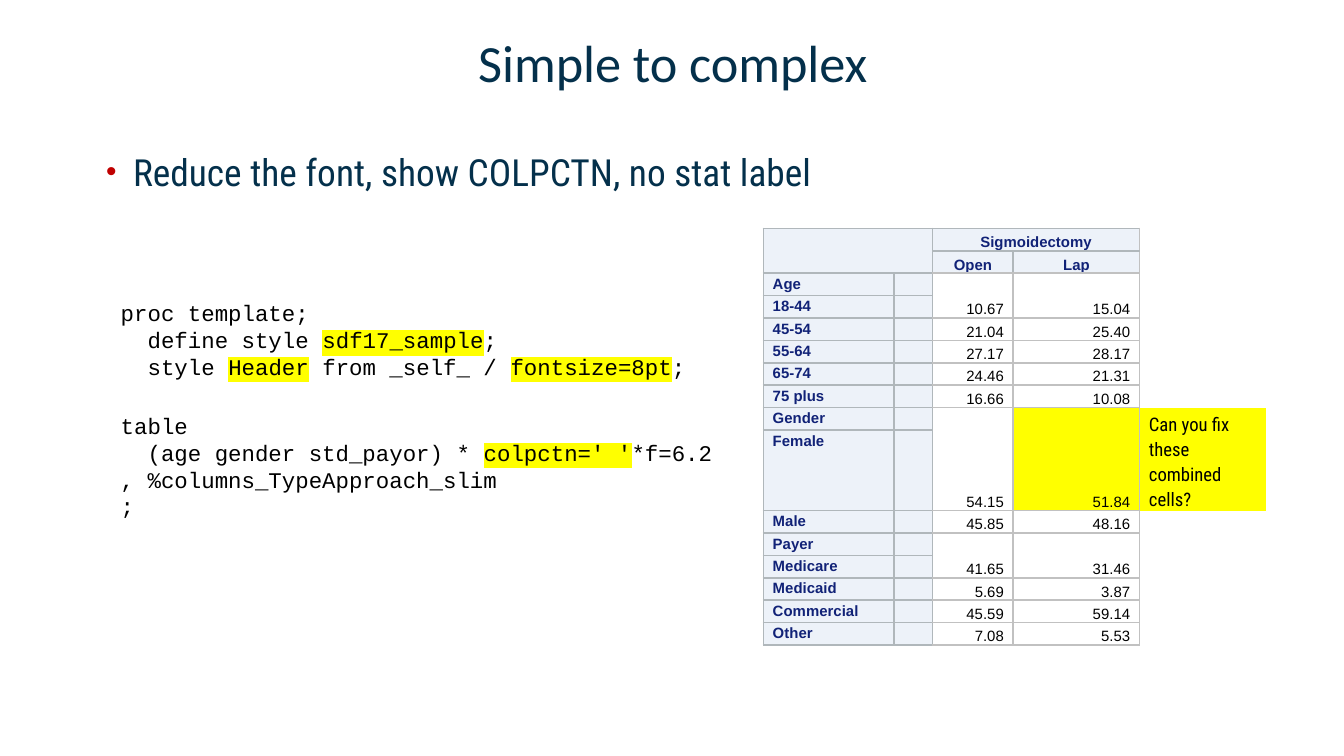
"""Builds the "Simple to complex" slide: a code listing beside its formatted table."""
from lxml import etree
from pptx import Presentation
from pptx import util as u
from pptx.dml.color import RGBColor
from pptx.enum import text
from pptx.oxml.ns import qn

NAVY, YELLOW, GRID, HEADER_GRID = "04304B", "FFFF00", "C1C1C1", "B0B7BB"


def color(hex_string):
    return RGBColor.from_string(hex_string)


def add_run(paragraph, words, face, size, ink, bold=False):
    run = paragraph.add_run()
    run.text = words
    for key, value in {"name": face, "size": u.Pt(size), "bold": bold}.items():
        setattr(run.font, key, value)
    run.font.color.rgb = color(ink)
    return run


prs = Presentation()
prs.slide_width, prs.slide_height = u.Inches(10), u.Inches(10 * 9 / 16)
slide = prs.slides.add_slide(prs.slide_layouts[1])

title, body = slide.placeholders
for part, top, height in ((title, 0.21, 0.5), (body, 1.11, 3.98)):
    box = {"left": 0.69, "top": top, "width": 8.63, "height": height}
    for key, value in box.items():
        setattr(part, key, u.Inches(value))
    part.text_frame.auto_size = text.MSO_AUTO_SIZE.NONE

title.text_frame.vertical_anchor = text.MSO_ANCHOR.MIDDLE
heading = title.text_frame.paragraphs[0]
heading.alignment = text.PP_ALIGN.CENTER
add_run(heading, "Simple to complex", "Calibri", 28, NAVY)

point = body.text_frame.paragraphs[0]
bullet = point._p.get_or_add_pPr()
bullet.set("marL", str(u.Inches(0.2)))
bullet.set("indent", str(-u.Inches(0.2)))
bullet_color = etree.SubElement(bullet, qn("a:buClr"))
etree.SubElement(bullet_color, qn("a:srgbClr"), val="C00000")
etree.SubElement(bullet, qn("a:buSzPct"), val="80000")
etree.SubElement(bullet, qn("a:buFont"), typeface="Arial")
etree.SubElement(bullet, qn("a:buChar"), char="•")
point.line_spacing, point.space_before = 0.85, u.Pt(0)
add_run(point, "Reduce the font, show COLPCTN, no stat label", "Roboto Condensed", 20, NAVY)

code_lines = [
    ["proc template;"],
    ["  define style ", "sdf17_sample", ";"],
    ["  style ", "Header", " from _self_ / ", "fontsize=8pt", ";"],
    ["table"],
    ["  (age gender std_payor) * ", "colpctn=' '", "*f=6.2"],
    [", %columns_TypeApproach_slim"],
    [";"],
]
code = slide.shapes.add_textbox(u.Inches(0.8), u.Inches(2.18), u.Inches(4.88), u.Inches(1.95)).text_frame
code.word_wrap = True
for number, pieces in enumerate(code_lines):
    line = code.add_paragraph() if number else code.paragraphs[0]
    if pieces == ["table"]:
        line.space_before = u.Pt(17)
    for position, piece in enumerate(pieces):
        run = add_run(line, piece, "Courier New", 12, "000000")
        if position % 2:
            highlight = etree.Element(qn("a:highlight"))
            etree.SubElement(highlight, qn("a:srgbClr"), val=YELLOW)
            run._r.rPr.find(qn("a:solidFill")).addnext(highlight)

rows = [
    ("", "", "Sigmoidectomy", "", ""),
    ("", "", "Open", "Lap", ""),
    ("Age", "", "10.67", "15.04", ""),
    ("18-44", "", "", "", ""),
    ("45-54", "", "21.04", "25.40", ""),
    ("55-64", "", "27.17", "28.17", ""),
    ("65-74", "", "24.46", "21.31", ""),
    ("75 plus", "", "16.66", "10.08", ""),
    ("Gender", "", "54.15", "51.84", "Can you fix these combined cells?"),
    ("Female", "", "", "", ""),
    ("Male", "", "45.85", "48.16", ""),
    ("Payer", "", "41.65", "31.46", ""),
    ("Medicare", "", "", "", ""),
    ("Medicaid", "", "5.69", "3.87", ""),
    ("Commercial", "", "45.59", "59.14", ""),
    ("Other", "", "7.08", "5.53", ""),
]
frame = slide.shapes.add_table(len(rows), 5, u.Inches(5.68), u.Inches(1.7), u.Inches(3.74), u.Inches(3.1))
results = frame.table
results.first_row = results.horz_banding = False
results._tbl.tblPr.find(qn("a:tableStyleId")).text = "{2D5ABB26-0587-4C30-8999-92F81FD0307C}"
for column, width in zip(results.columns, (0.97, 0.29, 0.6, 0.94, 0.94)):
    column.width = u.Inches(width)
for row, (label, *_) in zip(results.rows, rows):
    row.height = u.Inches(0.6) if label == "Female" else u.Pt(12)

merges = [(0, 0, 1, 1), (0, 2, 0, 3), (8, 4, 9, 4)]
merges += [(r, c, r + 1, c) for r in (2, 8, 11) for c in (2, 3)]
for top, left, bottom, right in merges:
    results.cell(top, left).merge(results.cell(bottom, right))

for r, values in enumerate(rows):
    for c, value in enumerate(values):
        cell = results.cell(r, c)
        is_side = c == 4
        is_header = not is_side and (r < 2 or c < 2)
        entry = cell.text_frame.paragraphs[0]
        entry.line_spacing = 1.15
        if r < 2:
            entry.alignment = text.PP_ALIGN.CENTER
        elif c in (2, 3):
            entry.alignment = text.PP_ALIGN.RIGHT
        if value:
            face, size = ("Roboto Condensed", 10) if is_side else ("Arial", 8)
            add_run(entry, value, face, size, "112277" if is_header else "000000", is_header)
        else:
            etree.SubElement(entry._p, qn("a:endParaRPr"), sz="800")
        margins = {"margin_left": 0.07, "margin_right": 0.07, "margin_top": 0, "margin_bottom": 0}
        for key, inset in margins.items():
            setattr(cell, key, u.Inches(inset))
        cell.vertical_anchor = text.MSO_ANCHOR.TOP if c < 2 else text.MSO_ANCHOR.BOTTOM
        if cell.is_spanned:
            continue
        for side in "LTB" if value == "Sigmoidectomy" else "LRTB":
            edge = etree.SubElement(cell._tc.get_or_add_tcPr(), qn("a:ln" + side), w=str(u.Pt(1)))
            if is_side and side != "L":
                etree.SubElement(edge, qn("a:noFill"))
                continue
            paint = etree.SubElement(edge, qn("a:solidFill"))
            dark = is_header or (c == 2 and side == "L")
            etree.SubElement(paint, qn("a:srgbClr"), val=HEADER_GRID if dark else GRID)
        cell.fill.solid()
        is_marked = r == 8 and c > 2
        cell.fill.fore_color.rgb = color(YELLOW if is_marked else "EDF2F9" if is_header else "FFFFFF")

prs.save("out.pptx")
